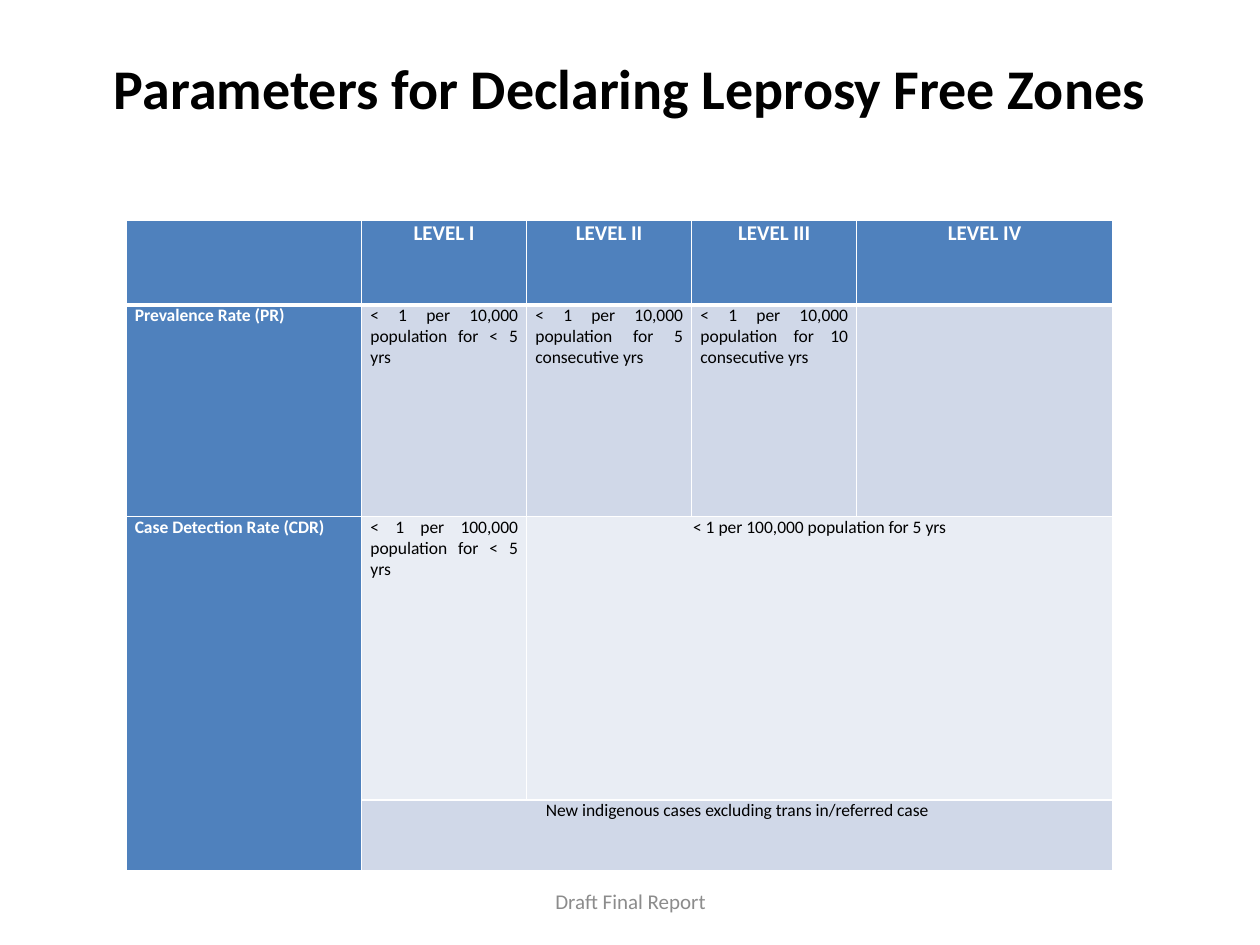
from lxml import etree
from pptx import Presentation
from pptx.dml.color import RGBColor
from pptx.enum.text import MSO_ANCHOR, PP_ALIGN
from pptx.oxml.ns import qn
from pptx.util import Inches, Pt

CENTER = PP_ALIGN.CENTER
JUSTIFY = PP_ALIGN.JUSTIFY
MIDDLE = MSO_ANCHOR.MIDDLE

FONT = "Calibri"
COLORS = {
    "text": "000000",
    "header": "4F81BD",
    "band_dark": "D0D8E8",
    "band_light": "E9EDF4",
    "white": "FFFFFF",
    "footer": "8C8C8C",
}

COLUMN_WIDTHS = [1.87, 1.31, 1.31, 1.31, 2.03]
ROW_HEIGHTS = [0.67, 1.68, 2.25, 0.56]
ROW_FILLS = ["header", "band_dark", "band_light", "band_dark"]
ROWS = [
    ["", "LEVEL I", "LEVEL II", "LEVEL III", "LEVEL IV"],
    [
        "Prevalence Rate (PR)",
        "< 1 per 10,000 population for < 5 yrs",
        "< 1 per 10,000 population for 5 consecutive yrs",
        "< 1 per 10,000 population for 10 consecutive yrs",
        "",
    ],
    [
        "Case Detection Rate (CDR)",
        "< 1 per 100,000 population for < 5 yrs",
        "< 1 per 100,000 population for 5 yrs",
        "",
        "",
    ],
    ["", "New indigenous cases excluding trans in/referred case", "", "", ""],
]
MERGES = [((2, 0), (3, 0)), ((2, 2), (2, 4)), ((3, 1), (3, 4))]


def write_text(frame, text, size, color, align, bold=False):
    para = frame.paragraphs[0]
    para.alignment = align
    span = para.add_run()
    span.text = text
    span.font.name = FONT
    span.font.size = Pt(size)
    span.font.bold = bold
    span.font.color.rgb = RGBColor.from_string(COLORS[color])


def add_label(page, box, text, size, color, bold=False, bottom=0.05):
    frame = page.shapes.add_textbox(*map(Inches, box)).text_frame
    frame.word_wrap = True
    frame.vertical_anchor = MIDDLE
    frame.margin_bottom = Inches(bottom)
    write_text(frame, text, size, color, CENTER, bold)


def set_borders(cell, widths):
    properties = cell._tc.get_or_add_tcPr()
    for index, (side, width) in enumerate(widths.items()):
        line = etree.Element(qn(f"a:ln{side}"), w=str(Pt(width)))
        fill = etree.SubElement(line, qn("a:solidFill"))
        etree.SubElement(fill, qn("a:srgbClr"), val=COLORS["white"])
        properties.insert(index, line)


def style_cell(cell, row, column):
    is_header = row == 0 or column == 0
    cell.fill.solid()
    fill = "header" if is_header else ROW_FILLS[row]
    cell.fill.fore_color.rgb = RGBColor.from_string(COLORS[fill])
    cell.margin_left = cell.margin_right = Inches(0.07)
    cell.margin_top = cell.margin_bottom = 0
    top = 3 if row == 1 else 1
    bottom = 3 if row == 0 else 1
    set_borders(cell, {"L": 1, "R": 1, "T": top, "B": bottom})
    text = ROWS[row][column]
    if text:
        centered = row == 0 or cell.is_merge_origin and column > 0
        write_text(
            cell.text_frame,
            text,
            12 if row == 0 else 10,
            "white" if is_header else "text",
            CENTER if centered else JUSTIFY,
            is_header,
        )


def add_parameter_table(page, box):
    table = page.shapes.add_table(
        len(ROW_HEIGHTS), len(COLUMN_WIDTHS), *map(Inches, box)
    ).table
    for column, width in zip(table.columns, COLUMN_WIDTHS):
        column.width = Inches(width)
    for row, height in zip(table.rows, ROW_HEIGHTS):
        row.height = Inches(height)
    for first, last in MERGES:
        table.cell(*first).merge(table.cell(*last))
    for row in range(len(ROW_HEIGHTS)):
        for column in range(len(COLUMN_WIDTHS)):
            style_cell(table.cell(row, column), row, column)


def main():
    deck = Presentation()
    deck.slide_width = Inches(10)
    deck.slide_height = Inches(7.5)
    page = deck.slides.add_slide(deck.slide_layouts[6])
    add_label(
        page,
        (0.5, 0.3, 9, 1.25),
        "Parameters for Declaring Leprosy Free Zones",
        32,
        "text",
        bold=True,
        bottom=0.52,
    )
    add_parameter_table(page, (1, 1.75, sum(COLUMN_WIDTHS), sum(ROW_HEIGHTS)))
    add_label(page, (3.42, 6.95, 3.17, 0.4), "Draft Final Report", 12, "footer")
    deck.save("out.pptx")


if __name__ == "__main__":
    main()
